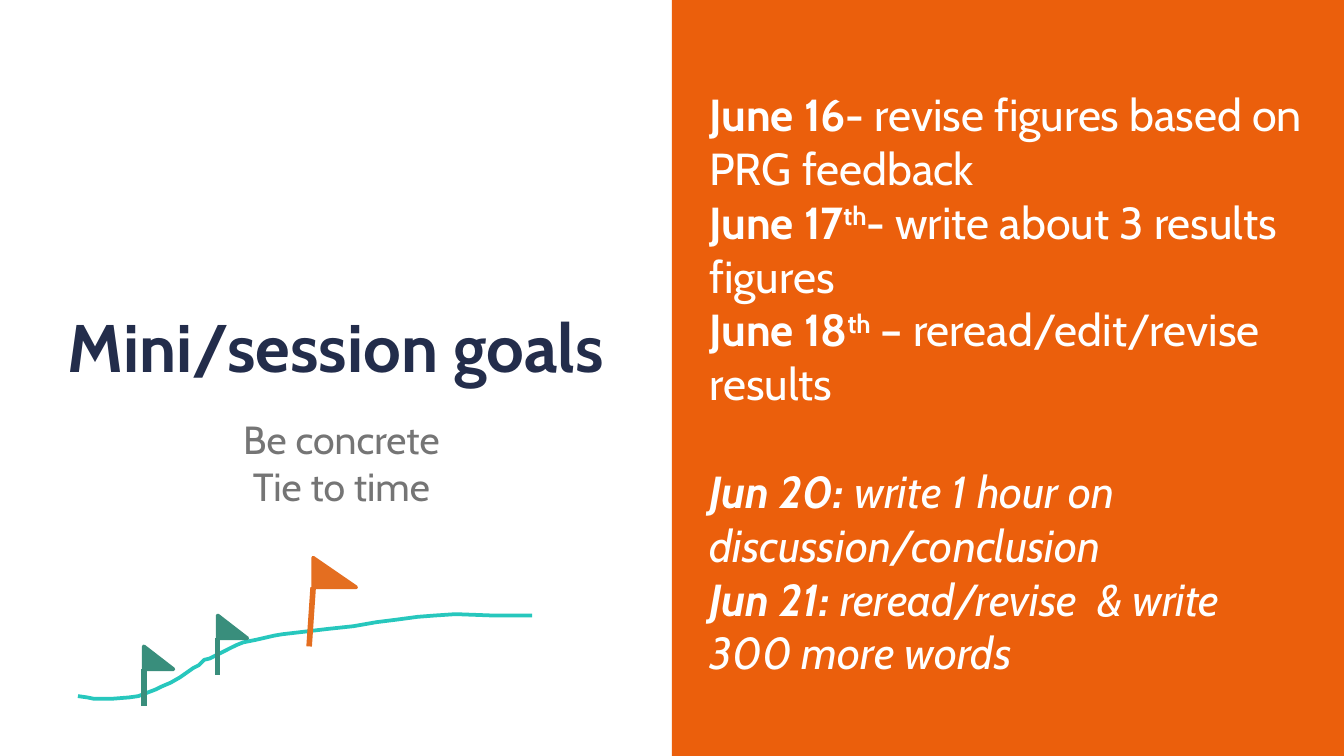
import dataclasses
import typing

import pptx
import pptx.dml.color
import pptx.enum.shapes
import pptx.enum.text
import pptx.oxml
import pptx.oxml.ns
import pptx.util

Inches = pptx.util.Inches
Pt = pptx.util.Pt
RGB = pptx.dml.color.RGBColor
Align = pptx.enum.text.PP_ALIGN
Anchor = pptx.enum.text.MSO_ANCHOR
Preset = pptx.enum.shapes.MSO_SHAPE

WIDTH = Inches(10)
HEIGHT = WIDTH * 9 // 16
HALF = WIDTH // 2

WHITE = RGB(0xFF, 0xFF, 0xFF)
PANEL = RGB(0xEB, 0x5F, 0x0C)
NAVY = RGB(0x23, 0x2D, 0x4B)
GRAY = RGB(0x75, 0x75, 0x75)
TEAL = RGB(0x27, 0xC7, 0xBD)
ORANGE = RGB(0xE4, 0x6E, 0x20)
GREEN = RGB(0x39, 0x8E, 0x7C)


class Run(typing.NamedTuple):
    text: str
    style: dict = {}
    raised: bool = False


class Line(typing.NamedTuple):
    runs: list[Run]
    before: float = 0


@dataclasses.dataclass
class Block:
    """A text box whose lines share one format."""
    box: tuple[float, float, float, float]
    lines: list[Line]
    font: dict
    anchor: Anchor
    align: Align = Align.LEFT
    left: float = 0
    indent: float = 0


class Flag(typing.NamedTuple):
    left: float
    top: float
    width: float
    height: float
    foot: tuple[float, float]
    color: RGB


BOLD = {"bold": True}
SLANT = {"italic": True}
BOTH = BOLD | SLANT

BLOCKS = [
    Block((0.29, 1.53, 4.42, 1.44), [Line([Run("Mini/session goals", BOLD)])],
          {"size": Pt(36), "color": NAVY}, Anchor.BOTTOM, Align.CENTER),
    Block((0.29, 2.99, 4.42, 1.47),
          [Line([Run("Be concrete")]), Line([Run("Tie to time")])],
          {"size": Pt(21), "color": GRAY}, Anchor.TOP, Align.CENTER, 0.5, -0.42),
    Block((5.1, 0.58, 4.7, 4.54), [
        Line([Run("June 16- ", BOLD), Run("revise figures based on PRG feedback")]),
        Line([Run("June 17", BOLD), Run("th", BOLD, True), Run("- ", BOLD),
              Run("write about 3 results figures")]),
        Line([Run("June 18", BOLD), Run("th", BOLD, True), Run(" – ", BOLD),
              Run("reread/edit/revise results")]),
        Line([Run("Jun 20: ", BOTH),
              Run("write 1 hour on discussion/conclusion", SLANT)], 29),
        Line([Run("Jun 21: ", BOTH),
              Run("reread/revise  & write 300 more words", SLANT)]),
    ], {"size": Pt(24), "color": WHITE}, Anchor.MIDDLE, left=0.08),
]

TRAIL = [
    (0.58, 5.18), (0.65, 5.19), (0.7, 5.2), (0.83, 5.2), (0.96, 5.19),
    (1.03, 5.18), (1.16, 5.13), (1.2, 5.11), (1.27, 5.08), (1.34, 5.04),
    (1.44, 4.97), (1.48, 4.95), (1.52, 4.91), (1.56, 4.9), (1.66, 4.85),
    (1.72, 4.82), (1.76, 4.8), (1.81, 4.78), (1.91, 4.76), (2.04, 4.73),
    (2.1, 4.72), (2.27, 4.7), (2.44, 4.68), (2.63, 4.66), (2.8, 4.63),
    (2.96, 4.61), (3.11, 4.59), (3.24, 4.58), (3.39, 4.57), (3.66, 4.58),
    (3.96, 4.58),
]

FLAGS = [
    Flag(2.33, 4.15, 0.32, 0.22, (2.3, 4.81), ORANGE),
    Flag(1.07, 4.81, 0.22, 0.17, (1.07, 5.25), GREEN),
    Flag(1.62, 4.58, 0.22, 0.17, (1.62, 5.02), GREEN),
]


def style(font, values: dict) -> None:
    for key, value in values.items():
        if key == "color":
            font.color.rgb = value
        else:
            setattr(font, key, value)


def stroke(shape, color: RGB, width: float) -> None:
    shape.line.color.rgb = color
    shape.line.width = Pt(width)


def fill(shape, color: RGB) -> None:
    shape.shadow.inherit = False
    shape.fill.solid()
    shape.fill.fore_color.rgb = color


def write(shapes, block: Block) -> None:
    frame = shapes.add_textbox(*map(Inches, block.box)).text_frame
    frame.word_wrap = True
    frame.vertical_anchor = block.anchor
    for side in ("left", "right", "top", "bottom"):
        setattr(frame, f"margin_{side}", Inches(0.1))
    for i, line in enumerate(block.lines):
        para = frame.add_paragraph() if i else frame.paragraphs[0]
        para.alignment = block.align
        para.space_before = Pt(line.before)
        props = para._p.get_or_add_pPr()
        props.set("marL", str(Inches(block.left)))
        props.set("indent", str(Inches(block.indent)))
        for part in line.runs:
            run = para.add_run()
            run.text = part.text
            style(run.font, {"name": "Cabin"} | block.font | part.style)
            if part.raised:
                run.font._element.set("baseline", "30000")


def trace(shapes, points: list[tuple[float, float]]) -> None:
    """Draw the rising trail under the flags."""
    (x, y), *rest = [(Inches(a), Inches(b)) for a, b in points]
    pen = shapes.build_freeform(x, y)
    pen.add_line_segments(rest, close=False)
    trail = pen.convert_to_shape()
    trail.shadow.inherit = False
    trail.fill.background()
    stroke(trail, TEAL, 2)


def plant(shapes, flag: Flag) -> None:
    """Draw a pennant and its pole."""
    cloth = shapes.add_shape(Preset.RIGHT_TRIANGLE, *map(Inches, flag[:4]))
    fill(cloth, flag.color)
    stroke(cloth, flag.color, 2)
    ends = (flag.left, flag.top + flag.height, *flag.foot)
    pole = shapes.add_connector(
        pptx.enum.shapes.MSO_CONNECTOR.STRAIGHT, *map(Inches, ends))
    stroke(pole, flag.color, 3)
    pole._element.spPr.append(pptx.oxml.parse_xml(
        f"<a:effectLst {pptx.oxml.ns.nsdecls('a')}/>"))


def main() -> None:
    deck = pptx.Presentation()
    deck.slide_width, deck.slide_height = WIDTH, HEIGHT
    shapes = deck.slides.add_slide(deck.slide_layouts[6]).shapes
    panel = shapes.add_shape(Preset.RECTANGLE, HALF, 0, HALF, HEIGHT)
    fill(panel, PANEL)
    panel.line.fill.background()
    for block in BLOCKS:
        write(shapes, block)
    trace(shapes, TRAIL)
    for flag in FLAGS:
        plant(shapes, flag)
    deck.save("out.pptx")


if __name__ == "__main__":
    main()
